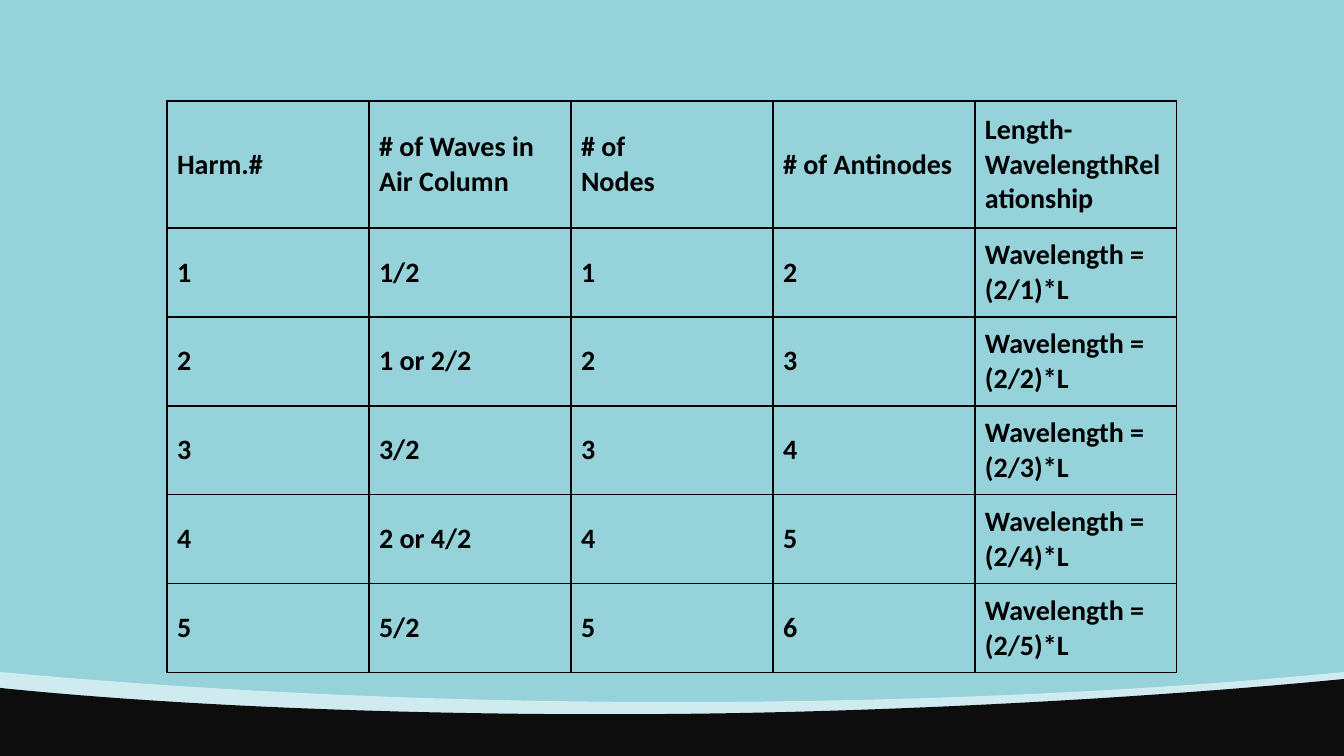
from lxml.etree import SubElement
from pptx import Presentation
from pptx.dml.color import RGBColor
from pptx.enum.text import MSO_VERTICAL_ANCHOR as Anchor
from pptx.oxml.ns import qn
from pptx.util import Pt

PX = 9072
WIDTH, HEIGHT = 1344, 756


def paint(fill, color):
    fill.solid()
    fill.fore_color.rgb = RGBColor.from_string(color)


def bend(shape, curve_count):
    outline = next(shape._element.iter(qn("a:path")))
    segments = outline.findall(qn("a:lnTo"))
    for start in range(0, curve_count * 3, 3):
        first, second, end = segments[start:start + 3]
        first.tag = qn("a:cubicBezTo")
        for segment in (second, end):
            first.append(segment[0])
            outline.remove(segment)


deck = Presentation()
deck.slide_width, deck.slide_height = WIDTH * PX, HEIGHT * PX
page = deck.slides.add_slide(deck.slide_layouts[6])
paint(page.background.fill, "96D2DA")

waves = [
    ("EAF6F8", 70, [(0, 672), (196, 690), (426, 702), (673, 702),
                    (919, 702), (1149, 691), (WIDTH, 672)]),
    ("0D0D0D", 100, [(0, 688), (196, 708), (449, 716), (673, 714),
                     (896, 712), (1149, 698), (WIDTH, 679)]),
]
for color, opacity, knots in waves:
    builder = page.shapes.build_freeform(*knots[0], scale=PX)
    builder.add_line_segments(knots[1:] + [(WIDTH, HEIGHT), (0, HEIGHT)], close=True)
    wave = builder.convert_to_shape()
    bend(wave, 2)
    wave.shadow.inherit = False
    wave.line.fill.background()
    paint(wave.fill, color)
    if opacity < 100:
        tint = wave.fill._xPr.find(qn("a:solidFill"))[0]
        SubElement(tint, qn("a:alpha"), val=str(opacity * 1000))

rows = [["Harm.#", "# of Waves in\vAir Column", "# of\vNodes", "# of Antinodes",
         "Length-WavelengthRelationship"]]
for harmonic, wave_count in enumerate(["1/2", "1 or 2/2", "3/2", "2 or 4/2", "5/2"], 1):
    rows.append([str(harmonic), wave_count, str(harmonic), str(harmonic + 1),
                 f"Wavelength = (2/{harmonic})*L"])

table = page.shapes.add_table(
    len(rows), 5, 167 * PX, 101 * PX, 1010 * PX, 572 * PX).table
table.first_row = False
table.horz_banding = False
for column in table.columns:
    column.width = 202 * PX

for index, (row, texts) in enumerate(zip(table.rows, rows)):
    row.height = (89 if index else 127) * PX
    for cell, text in zip(row.cells, texts):
        cell.text_frame.text = text
        cell.vertical_anchor = Anchor.MIDDLE
        for para in cell.text_frame.paragraphs:
            for span in para.runs:
                span.font.name = "Calibri"
                span.font.size = Pt(20)
                span.font.bold = True
                span.font.color.rgb = RGBColor.from_string("000000")
        properties = cell._tc.get_or_add_tcPr()
        for side in ("a:lnL", "a:lnR", "a:lnT", "a:lnB"):
            border = SubElement(properties, qn(side), w=str(Pt(1)))
            SubElement(SubElement(border, qn("a:solidFill")), qn("a:srgbClr"), val="000000")
        cell.fill.background()

deck.save("out.pptx")
